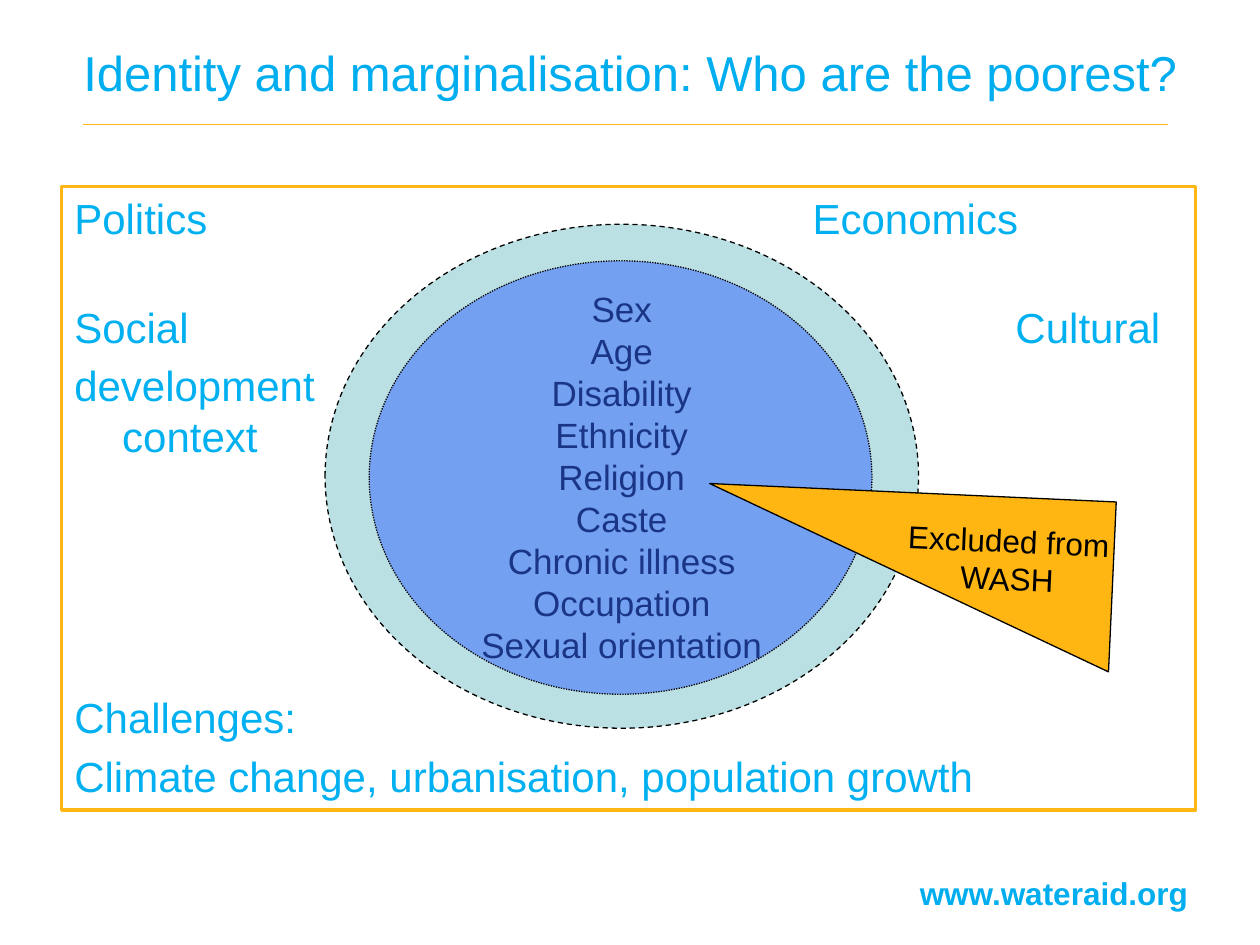
from lxml import etree
from pptx import Presentation
from pptx.dml.color import RGBColor
from pptx.enum import dml, shapes, text
from pptx.oxml.ns import qn
from pptx.util import Inches, Pt

CYAN = RGBColor(0x00, 0xAE, 0xEF)
LABEL_BLUE = RGBColor(0x00, 0xB0, 0xF0)
AMBER = RGBColor(0xFF, 0xB6, 0x12)
PALE_TEAL = RGBColor(0xBB, 0xE0, 0xE3)
BLUE = RGBColor(0x33, 0x66, 0xFF)
BLACK = RGBColor(0, 0, 0)

IDENTITIES = ["Sex", "Age", "Disability", "Ethnicity", "Religion", "Caste",
              "Chronic illness", "Occupation", "Sexual orientation"]
CONTEXT_LABELS = [
    (0.1, 0.05, 2, ["Politics"]),
    (5.96, 0.05, 2, ["Economics"]),
    (0.1, 0.91, 2.2, ["Social", "development\vcontext"]),
    (7.57, 0.91, 1.4, ["Cultural"]),
    (0.1, 4.01, 8, ["Challenges:", "Climate change, urbanisation, population growth"]),
]


def write(frame, lines, size, color, align=text.PP_ALIGN.LEFT, bold=False, gap=0):
    """Fill a text frame with one formatted paragraph per line."""
    frame.text = "\n".join(lines)
    for index, paragraph in enumerate(frame.paragraphs):
        paragraph.alignment = align
        if index:
            paragraph.space_before = Pt(gap)
        for run in paragraph.runs:
            run.font.name = "Arial"
            run.font.size = Pt(size)
            run.font.bold = bold
            run.font.color.rgb = color


def add_text_box(slide, left, top, width, height, lines, size, color, **style):
    """Add a wrapping text box without insets."""
    box = slide.shapes.add_textbox(Inches(left), Inches(top), Inches(width), Inches(height))
    frame = box.text_frame
    frame.word_wrap = True
    frame.margin_left = frame.margin_right = frame.margin_top = frame.margin_bottom = 0
    write(frame, lines, size, color, **style)
    return box


def add_outlined_shape(slide, kind, left, top, width, height, fill, line, weight, dash=None):
    """Add a flat preset shape with an outline and an optional fill."""
    shape = slide.shapes.add_shape(kind, Inches(left), Inches(top), Inches(width), Inches(height))
    shape.shadow.inherit = False
    if fill is None:
        shape.fill.background()
    else:
        shape.fill.solid()
        shape.fill.fore_color.rgb = fill
    shape.line.color.rgb = line
    shape.line.width = Pt(weight)
    if dash is not None:
        shape.line.dash_style = dash
    return shape


def add_heading(slide, left, top, width):
    """Place the title and the thin rule beneath it."""
    title = slide.shapes.title
    title.left, title.top = Inches(left), Inches(top)
    title.width, title.height = Inches(width), Inches(0.65)
    title.text_frame.vertical_anchor = text.MSO_ANCHOR.TOP
    write(title.text_frame, ["Identity and marginalisation: Who are the poorest?"],
          28, CYAN, text.PP_ALIGN.CENTER)
    rule_y = Inches(top + 0.7)
    rule = slide.shapes.add_connector(shapes.MSO_CONNECTOR.STRAIGHT, Inches(left + 0.16), rule_y,
                                      Inches(left + width - 0.23), rule_y)
    rule.line.color.rgb = AMBER
    rule.line.width = Pt(0.75)
    etree.SubElement(rule._element.spPr, qn("a:effectLst"))


def add_context(slide, left, top, width, height):
    """Draw the frame with the labels of the wider context."""
    add_outlined_shape(slide, shapes.MSO_SHAPE.RECTANGLE, left, top, width, height,
                       None, AMBER, 2)
    for x, y, label_width, lines in CONTEXT_LABELS:
        box = add_text_box(slide, left + x, top + y, label_width, 0.4 * len(lines),
                           lines, 24, LABEL_BLUE, gap=4.8)
        for paragraph in box.text_frame.paragraphs:
            properties = paragraph._p.get_or_add_pPr()
            properties.set("marL", str(Inches(0.38)))
            properties.set("indent", str(-Inches(0.38)))


def add_identities(slide, left, top, width, height):
    """Draw the identity ellipse under a translucent inner ellipse."""
    outer = add_outlined_shape(slide, shapes.MSO_SHAPE.OVAL, left, top, width, height,
                               PALE_TEAL, BLACK, 0.75, dml.MSO_LINE.DASH)
    outer.text_frame.word_wrap = False
    outer.text_frame.vertical_anchor = text.MSO_ANCHOR.MIDDLE
    write(outer.text_frame, IDENTITIES, 20, BLACK, text.PP_ALIGN.CENTER)
    inner = add_outlined_shape(slide, shapes.MSO_SHAPE.OVAL, left + 0.35, top + 0.29,
                               width - 0.72, height - 0.56, BLUE, BLACK, 0.75,
                               dml.MSO_LINE.ROUND_DOT)
    color = inner.fill._xPr.find(qn("a:solidFill"))[0]
    etree.SubElement(color, qn("a:alpha")).set("val", "52000")


def add_excluded_wedge(slide, left, top, width, height):
    """Draw the tilted wedge with its caption."""
    tilt = 2.6
    wedge = add_outlined_shape(slide, shapes.MSO_SHAPE.ISOSCELES_TRIANGLE, left, top,
                               width, height, AMBER, BLACK, 0.75)
    wedge.adjustments[0] = 0
    wedge.rotation = 180 + tilt
    caption = add_text_box(slide, left + 1.4, top + 0.23, 2, 0.6, ["Excluded from", "WASH"],
                           18, BLACK, align=text.PP_ALIGN.CENTER)
    caption.rotation = tilt


def main():
    """Build and save the slide."""
    presentation = Presentation()
    presentation.slide_width, presentation.slide_height = Inches(10), Inches(7.5)
    slide = presentation.slides.add_slide(presentation.slide_layouts[5])
    add_heading(slide, 0.5, 0.29, 9)
    add_context(slide, 0.49, 1.48, 9, 4.95)
    add_identities(slide, 2.58, 1.78, 4.71, 4)
    add_excluded_wedge(slide, 5.6, 3.91, 3.23, 1.35)
    add_text_box(slide, 7.3, 6.94, 2.2, 0.3, ["www.wateraid.org"], 18, CYAN, bold=True)
    presentation.save("out.pptx")


if __name__ == "__main__":
    main()
